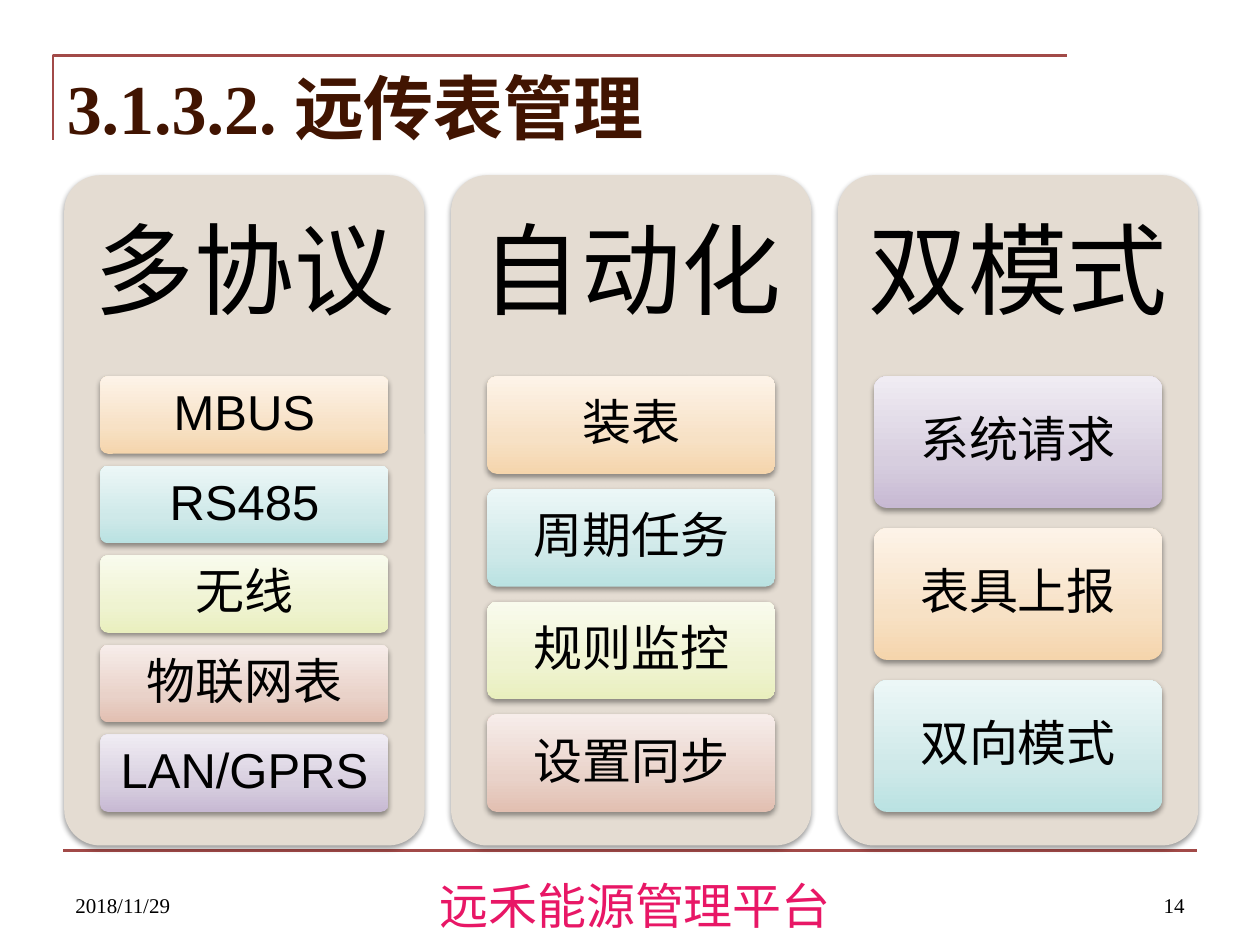
from pptx import Presentation
from pptx.dml.color import RGBColor
from pptx.enum.shapes import MSO_CONNECTOR, MSO_SHAPE
from pptx.enum.text import MSO_ANCHOR, PP_ALIGN
from pptx.oxml.ns import qn
from pptx.util import Inches, Pt
from lxml import etree

ROUNDED = MSO_SHAPE.ROUNDED_RECTANGLE
STRAIGHT = MSO_CONNECTOR.STRAIGHT
LEFT, CENTER, RIGHT = PP_ALIGN.LEFT, PP_ALIGN.CENTER, PP_ALIGN.RIGHT
TOP, MIDDLE, BOTTOM = MSO_ANCHOR.TOP, MSO_ANCHOR.MIDDLE, MSO_ANCHOR.BOTTOM

SERIF, SANS, CHINESE = "Times New Roman", "Arial", "Noto Sans CJK SC"
BLACK, RULE, TITLE, PANEL, BRIGHT = "000000", "A24A48", "411401", "E4DCD2", "E81766"

ORANGE = ("F5D5AC", "F7E1C5", "FDF3E8")
TEAL = ("BAE2E2", "CFE9E9", "ECF7F7")
LIME = ("E9EFBE", "EFF3D1", "F9FBED")
ROSE = ("E2BFB1", "E9D2C9", "F7EDEA")
VIOLET = ("C7B9D3", "D7CEDF", "F0ECF3")
STOPS = (0, 35, 100)

PANEL_WIDTH, PANEL_PITCH = 2.86, 3.07
GAP_RATIO = 2 / 13

COLUMNS = [
    ("多协议", [("MBUS", ORANGE), ("RS485", TEAL), ("无线", LIME),
             ("物联网表", ROSE), ("LAN/GPRS", VIOLET)]),
    ("自动化", [("装表", ORANGE), ("周期任务", TEAL), ("规则监控", LIME),
             ("设置同步", ROSE)]),
    ("双模式", [("系统请求", VIOLET), ("表具上报", ORANGE), ("双向模式", TEAL)]),
]


def color(value):
    return RGBColor.from_string(value)


def add_element(parent, tag, **attributes):
    element = etree.SubElement(parent, qn(tag))
    for name, value in attributes.items():
        element.set(name, str(value))
    return element


def add_span(para, text, size, font, ink, bold=False):
    span = para.add_run()
    span.text = text
    span.font.size = Pt(size)
    span.font.bold = bold
    span.font.color.rgb = color(ink)
    span.font.name = font
    add_element(span.font._element, "a:ea", typeface=CHINESE)


def set_frame(frame, anchor, align, wrap=True, insets=(0.1, 0.05)):
    frame.word_wrap = wrap
    frame.vertical_anchor = anchor
    frame.margin_left = frame.margin_right = Inches(insets[0])
    frame.margin_top = frame.margin_bottom = Inches(insets[1])
    para = frame.paragraphs[0]
    para.alignment = align
    return para


def add_label(page, left, top, width, height, anchor, align, wrap=True):
    box = page.shapes.add_textbox(Inches(left), Inches(top), Inches(width), Inches(height))
    return set_frame(box.text_frame, anchor, align, wrap)


def add_card(page, left, top, width, height):
    card = page.shapes.add_shape(
        ROUNDED, Inches(left), Inches(top), Inches(width), Inches(height))
    card.adjustments[0] = 0.1
    card.line.fill.background()
    card.shadow.inherit = False
    effects = card._element.spPr.find(qn("a:effectLst"))
    shadow = add_element(effects, "a:outerShdw", blurRad=Pt(3.1), dist=Pt(1.6),
                         dir=90 * 60000, rotWithShape=0)
    shade = add_element(shadow, "a:srgbClr", val=BLACK)
    add_element(shade, "a:alpha", val=38000)
    return card


def fill_gradient(card, shades):
    card.fill.gradient()
    card.fill.gradient_angle = 90
    stop_list = card._element.spPr.find(qn("a:gradFill")).find(qn("a:gsLst"))
    for stop in list(stop_list):
        stop_list.remove(stop)
    for position, shade in zip(STOPS, shades):
        stop = add_element(stop_list, "a:gs", pos=position * 1000)
        add_element(stop, "a:srgbClr", val=shade)


def add_panel(page, left, top, width, height, heading, items):
    panel = add_card(page, left, top, width, height)
    panel.fill.solid()
    panel.fill.fore_color.rgb = color(PANEL)

    heading_height = 0.3 * height
    para = add_label(page, left, top, width, heading_height, MIDDLE, CENTER, wrap=False)
    para.line_spacing = 0.9
    add_span(para, heading, 57, SANS, BLACK)

    count = len(items)
    item_height = 0.65 * height / (count + (count - 1) * GAP_RATIO)
    for index, (text, shades) in enumerate(items):
        item_top = top + heading_height + index * item_height * (1 + GAP_RATIO)
        card = add_card(page, left + 0.1 * width, item_top, 0.8 * width, item_height)
        fill_gradient(card, shades)
        para = set_frame(card.text_frame, MIDDLE, CENTER, insets=(0.08, 0.06))
        para.line_spacing = 0.9
        add_span(para, text, 28, SANS, BLACK)


def style_rule(rule):
    rule.line.color.rgb = color(RULE)
    rule.line.width = Pt(1.5)


def add_header(page, left, top, width, height):
    builder = page.shapes.build_freeform(Inches(left), Inches(top + 0.67))
    builder.add_line_segments(
        [(Inches(left), Inches(top)), (Inches(left + 8.05), Inches(top))], close=False)
    corner = builder.convert_to_shape()
    corner.fill.background()
    corner.shadow.inherit = False
    style_rule(corner)

    title = page.shapes.title
    title.left, title.top = Inches(left + 0.01), Inches(top + 0.02)
    title.width, title.height = Inches(width), Inches(height)
    para = set_frame(title.text_frame, TOP, LEFT)
    add_span(para, "3.1.3.2. 远传表管理", 40, SERIF, TITLE, bold=True)


def add_footer(page, left, top, width):
    rule = page.shapes.add_connector(
        STRAIGHT, Inches(left), Inches(top), Inches(left + width), Inches(top))
    style_rule(rule)
    add_element(rule._element.spPr, "a:effectLst")

    para = add_label(page, left + 2.74, top + 0.15, 3.6, 0.57, TOP, CENTER, wrap=False)
    add_span(para, "远禾能源管理平台", 28, CHINESE, BRIGHT)
    side = 2.33
    para = add_label(page, left, top + 0.08, side, 0.5, BOTTOM, LEFT)
    add_span(para, "2018/11/29", 12, SERIF, BLACK)
    para = add_label(page, left + width - side, top + 0.08, side, 0.5, BOTTOM, RIGHT)
    add_span(para, "14", 12, SERIF, BLACK)


def main():
    deck = Presentation()
    deck.slide_width, deck.slide_height = Inches(10), Inches(7.5)
    page = deck.slides.add_slide(deck.slide_layouts[5])
    add_header(page, 0.42, 0.44, 9.08, 0.77)
    add_footer(page, 0.5, 6.75, 9)
    for index, (heading, items) in enumerate(COLUMNS):
        add_panel(page, 0.51 + index * PANEL_PITCH, 1.39, PANEL_WIDTH, 5.32, heading, items)
    deck.save("out.pptx")


if __name__ == "__main__":
    main()
